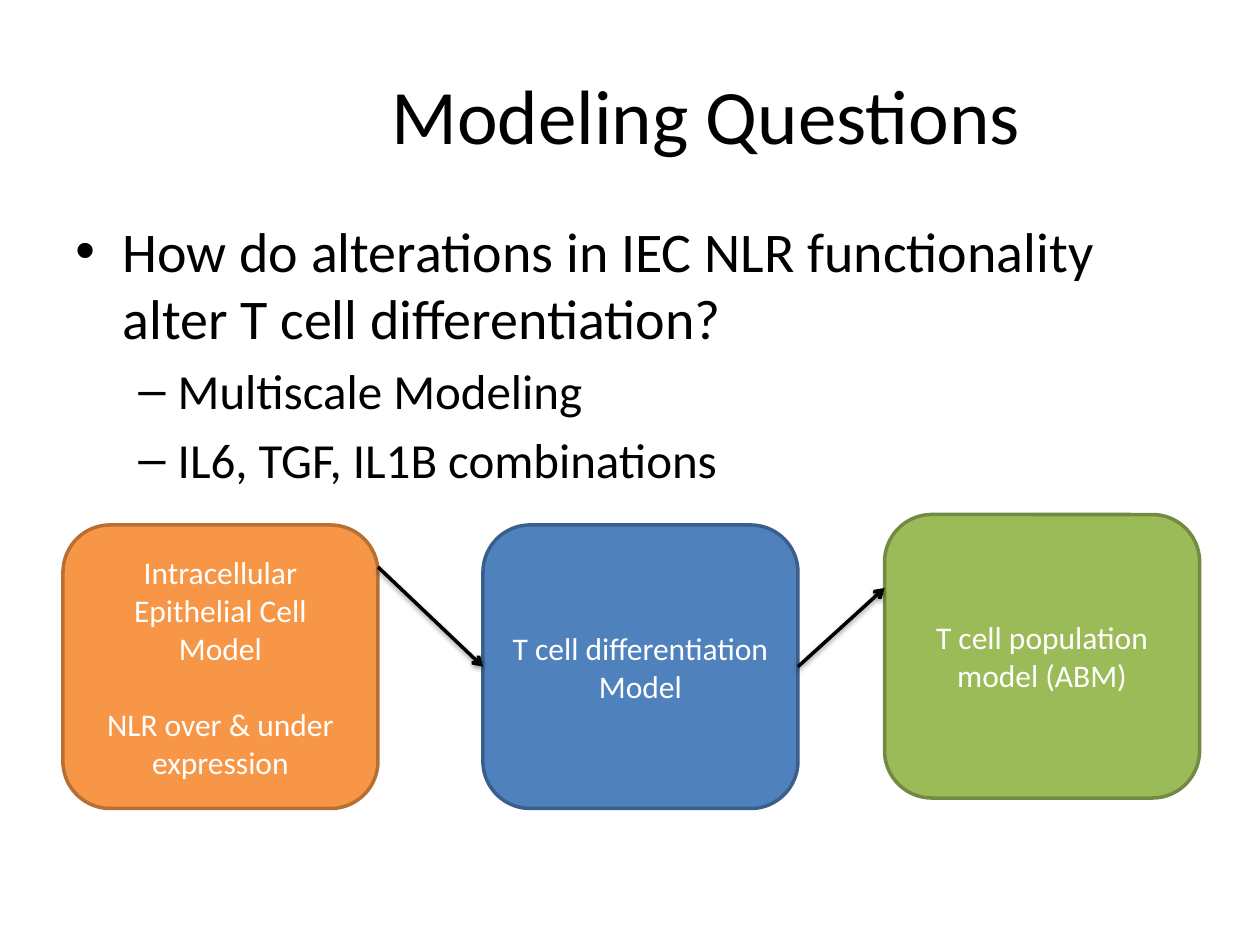
from lxml.etree import SubElement
from pptx import Presentation
from pptx.dml.color import RGBColor
from pptx.enum.shapes import MSO_CONNECTOR, MSO_SHAPE
from pptx.enum.text import MSO_ANCHOR, PP_ALIGN
from pptx.oxml.ns import qn
from pptx.util import Pt

COLORS = {
    "text": "000000", "box_text": "FFFFFF", "arrow": "000000",
    "epithelial": "F79646", "epithelial_line": "B76F34",
    "differentiation": "4F81BD", "differentiation_line": "3A5F8C",
    "population": "9BBB59", "population_line": "738A42",
}
FONT = "Calibri"
LINE_WIDTH = 2
BOX_W, BOX_H = 180, 162


def rgb(name):
    return RGBColor.from_string(COLORS[name])


def write(tf, text, first=False, size=18, color="text", align=PP_ALIGN.LEFT,
          before=0, bullet=None, left=0, hang=0):
    """Add one paragraph; first=True fills the paragraph already there."""
    p = tf.paragraphs[0] if first else tf.add_paragraph()
    if bullet:
        pPr = p._p.get_or_add_pPr()
        pPr.set("marL", str(Pt(left)))
        pPr.set("indent", str(-Pt(hang)))
        SubElement(pPr, qn("a:buFont"), typeface="Arial")
        SubElement(pPr, qn("a:buChar"), char=bullet)
    p.alignment = align
    p.space_before = Pt(before)
    r = p.add_run()
    r.text = text
    r.font.size = Pt(size)
    r.font.name = FONT
    r.font.color.rgb = rgb(color)


def add_text_frame(s, x, y, w, h, anchor):
    tf = s.shapes.add_textbox(Pt(x), Pt(y), Pt(w), Pt(h)).text_frame
    tf.word_wrap = True
    tf.vertical_anchor = anchor
    return tf


def add_title(s, x, y, w, h):
    tf = add_text_frame(s, x, y, w, h, MSO_ANCHOR.MIDDLE)
    write(tf, "Modeling Questions", first=True, size=44, align=PP_ALIGN.CENTER)


def add_questions(s, x, y, w, h):
    tf = add_text_frame(s, x, y, w, h, MSO_ANCHOR.TOP)
    write(tf, "How do alterations in IEC NLR functionality alter T cell differentiation?",
          first=True, size=32, bullet="•", left=27, hang=27)
    for text in ("Multiscale Modeling", "IL6, TGF, IL1B combinations"):
        write(tf, text, size=28, before=5.6, bullet="–", left=58.5, hang=22.5)


def add_model(s, x, y, color, *texts):
    box = s.shapes.add_shape(MSO_SHAPE.ROUNDED_RECTANGLE,
                             Pt(x), Pt(y), Pt(BOX_W), Pt(BOX_H))
    box.shadow.inherit = False
    box.fill.solid()
    box.fill.fore_color.rgb = rgb(color)
    box.line.color.rgb = rgb(color + "_line")
    box.line.width = Pt(LINE_WIDTH)
    tf = box.text_frame
    tf.word_wrap = True
    tf.vertical_anchor = MSO_ANCHOR.MIDDLE
    for i, text in enumerate(texts):
        write(tf, text, first=i == 0, color="box_text",
              align=PP_ALIGN.CENTER, before=22 if i else 0)
    return box


def add_arrow(s, x1, y1, x2, y2):
    """Add an arrow with a soft shadow below it."""
    c = s.shapes.add_connector(MSO_CONNECTOR.STRAIGHT, Pt(x1), Pt(y1), Pt(x2), Pt(y2))
    c.line.color.rgb = rgb("arrow")
    c.line.width = Pt(LINE_WIDTH)
    SubElement(c.line._get_or_add_ln(), qn("a:tailEnd"), type="arrow")
    effects = SubElement(c._element.spPr, qn("a:effectLst"))
    shadow = SubElement(effects, qn("a:outerShdw"), blurRad=str(Pt(3.1)),
                        dist=str(Pt(1.6)), dir="5400000", rotWithShape="0")
    tint = SubElement(shadow, qn("a:srgbClr"), val=COLORS["arrow"])
    SubElement(tint, qn("a:alpha"), val="38000")
    return c


def add_model_chain(s, x, y):
    middle_x, right_x = x + 240, x + 469.5
    middle_y = y + BOX_H / 2
    add_model(s, x, y, "epithelial",
              "Intracellular Epithelial Cell Model", "NLR over & under expression")
    middle = add_model(s, middle_x, y, "differentiation", "T cell differentiation Model")
    add_model(s, right_x, y - 6, "population", "T cell population model (ABM)")
    arrow_in = add_arrow(s, x + BOX_W, y + 24, middle_x, middle_y)
    arrow_in.end_connect(middle, 1)
    arrow_out = add_arrow(s, middle_x + BOX_W, middle_y, right_x, y + 36)
    arrow_out.begin_connect(middle, 3)


def main():
    prs = Presentation()
    prs.slide_width, prs.slide_height = Pt(720), Pt(540)
    s = prs.slides.add_slide(prs.slide_layouts[6])
    add_title(s, 129, 20, 549, 90)
    add_questions(s, 36, 120, 648, 356)
    add_model_chain(s, 36, 300)
    prs.save("out.pptx")


if __name__ == "__main__":
    main()
